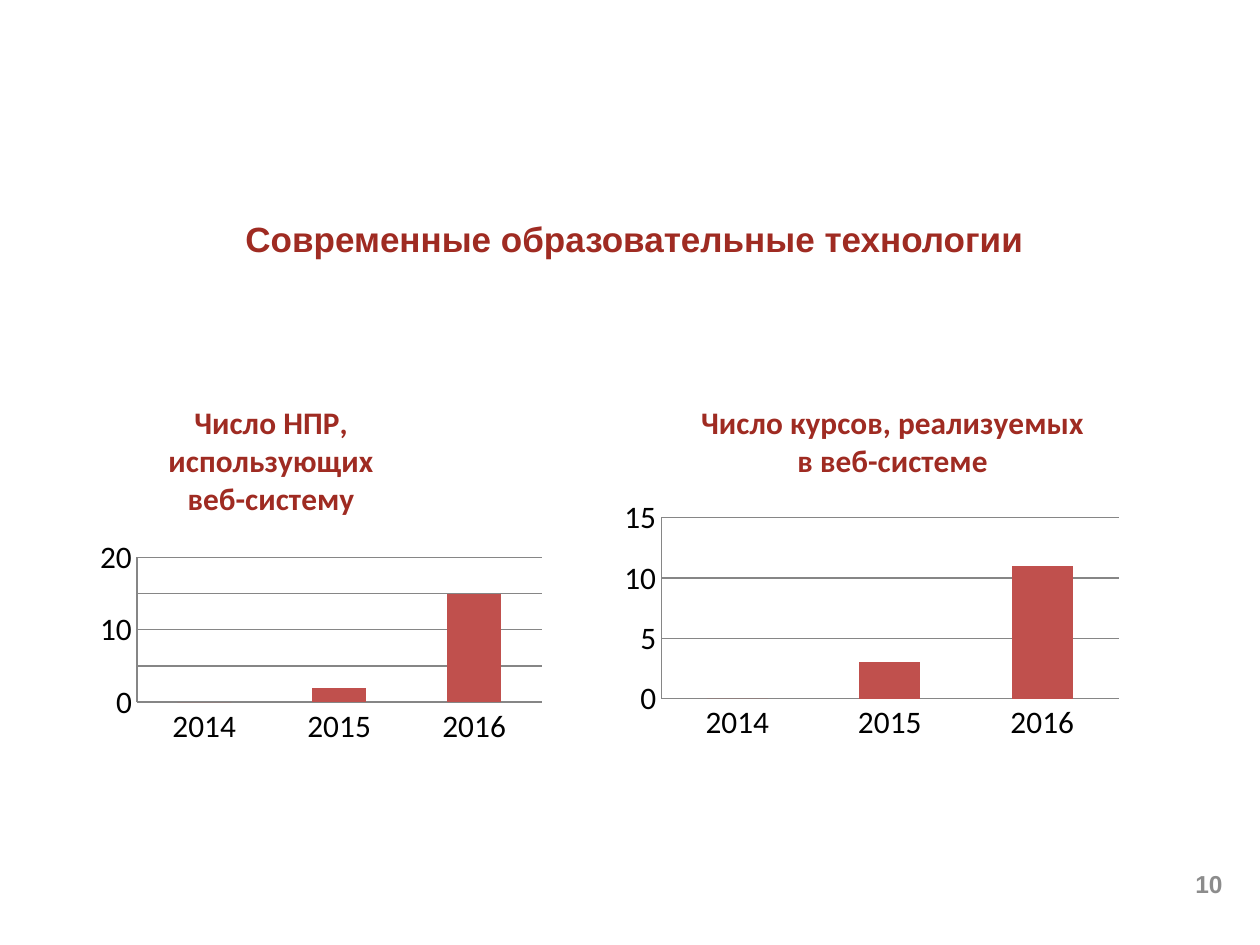
import pptx
import pptx.chart.data
import pptx.dml.color
import pptx.enum.chart
import pptx.enum.text
import pptx.oxml
import pptx.oxml.ns
import pptx.util

RED = pptx.dml.color.RGBColor(0x9F, 0x2B, 0x22)
BAR = pptx.dml.color.RGBColor(0xC0, 0x50, 0x4D)
GREY = pptx.dml.color.RGBColor(0x8C, 0x8C, 0x8C)
LINE = pptx.dml.color.RGBColor(0x86, 0x86, 0x86)
BLACK = pptx.dml.color.RGBColor(0, 0, 0)
ALIGN = pptx.enum.text.PP_ALIGN
ANCHOR = pptx.enum.text.MSO_ANCHOR
TICK = pptx.enum.chart.XL_TICK_MARK
YEARS = ("2014", "2015", "2016")


class SlideBuilder:
    scale = 914400 / 126
    chart_size = 17.9

    def __init__(self, presentation):
        self.slide = presentation.slides.add_slide(presentation.slide_layouts[6])

    def emu(self, *lengths):
        return [round(length * self.scale) for length in lengths]

    def style_font(self, font, name, size, color, bold=False):
        formats = {"name": name, "size": pptx.util.Pt(size), "bold": bold}
        for key, value in formats.items():
            setattr(font, key, value)
        font.color.rgb = color

    def text(self, box, words, size, color, align, anchor, spacing=1.0):
        frame = self.slide.shapes.add_textbox(*self.emu(*box)).text_frame
        for key, value in {"word_wrap": True, "vertical_anchor": anchor}.items():
            setattr(frame, key, value)
        paragraph = frame.paragraphs[0]
        formats = {"text": words, "alignment": align, "line_spacing": spacing}
        for key, value in formats.items():
            setattr(paragraph, key, value)
        self.style_font(paragraph.runs[0].font, "Arial", size, color, True)

    def layout(self, parent, **places):
        for old in parent.findall(pptx.oxml.ns.qn("c:layout")):
            parent.remove(old)
        target = '<c:layoutTarget val="inner"/>' if "w" in places else ""
        modes = "".join(f'<c:{axis}Mode val="edge"/>' for axis in "xy")
        values = "".join(f'<c:{key} val="{value}"/>' for key, value in places.items())
        return pptx.oxml.parse_xml(
            f'<c:layout {pptx.oxml.ns.nsdecls("c")}><c:manualLayout>'
            f"{target}{modes}{values}</c:manualLayout></c:layout>"
        )

    def column_chart(self, box, title_lines, title_place, plot_place, values, top):
        data = pptx.chart.data.CategoryChartData()
        data.categories = YEARS
        data.add_series("Series 1", values)
        chart = self.slide.shapes.add_chart(
            pptx.enum.chart.XL_CHART_TYPE.COLUMN_CLUSTERED, *self.emu(*box), data
        ).chart
        chart.has_legend = False
        self.style_font(chart.font, "Calibri", self.chart_size, BLACK)

        title = chart.chart_title
        title.text_frame.text = "\n".join(title_lines)
        for paragraph in title.text_frame.paragraphs:
            paragraph.alignment = ALIGN.CENTER
            self.style_font(paragraph.runs[0].font, "Calibri", self.chart_size, RED, True)
        title_xml = chart.chart_title.format.element if hasattr(title.format, "element") else title.element
        title_layout = self.layout(title_xml, **title_place)
        title_xml.find(pptx.oxml.ns.qn("c:tx")).addnext(title_layout)
        title.include_in_layout = False

        plot = chart.plots[0]
        for key, value in {"gap_width": 150, "vary_by_categories": False}.items():
            setattr(plot, key, value)
        fill = plot.series[0].format.fill
        fill.solid()
        fill.fore_color.rgb = BAR
        plot_area = chart.element.find(".//" + pptx.oxml.ns.qn("c:plotArea"))
        plot_area.insert(0, self.layout(plot_area, **plot_place))

        scale_formats = {
            "minimum_scale": 0,
            "maximum_scale": top,
            "major_unit": 5,
            "has_major_gridlines": True,
        }
        for key, value in scale_formats.items():
            setattr(chart.value_axis, key, value)
        for axis in (chart.category_axis, chart.value_axis):
            for key in ("major_tick_mark", "minor_tick_mark"):
                setattr(axis, key, TICK.NONE)
        for line in (
            chart.category_axis.format.line,
            chart.value_axis.format.line,
            chart.value_axis.major_gridlines.format.line,
        ):
            line.color.rgb = LINE
            line.width = pptx.util.Pt(0.75)


def main():
    presentation = pptx.Presentation()
    presentation.slide_width = pptx.util.Inches(10)
    presentation.slide_height = pptx.util.Inches(7.5)
    builder = SlideBuilder(presentation)
    builder.text((941, 859, 294, 50), "10", 14, GREY, ALIGN.RIGHT, ANCHOR.MIDDLE)
    builder.text(
        (84, 190, 1101, 75), "Современные образовательные технологии",
        20, RED, ALIGN.CENTER, ANCHOR.TOP, 1.5,
    )
    builder.column_chart(
        (91, 391, 460, 362), ("Число НПР,", "использующих", "веб-систему"),
        {"x": 0.16, "y": 0.02}, {"x": 0.1, "y": 0.46, "w": 0.88, "h": 0.4},
        (0, 2, 15), 20,
    )
    builder.column_chart(
        (615, 391, 514, 362), ("Число курсов, реализуемых", "в веб-системе"),
        {"x": 0.16, "y": 0.02}, {"x": 0.09, "y": 0.35, "w": 0.89, "h": 0.5},
        (0, 3, 11), 15,
    )
    presentation.save("out.pptx")


if __name__ == "__main__":
    main()
